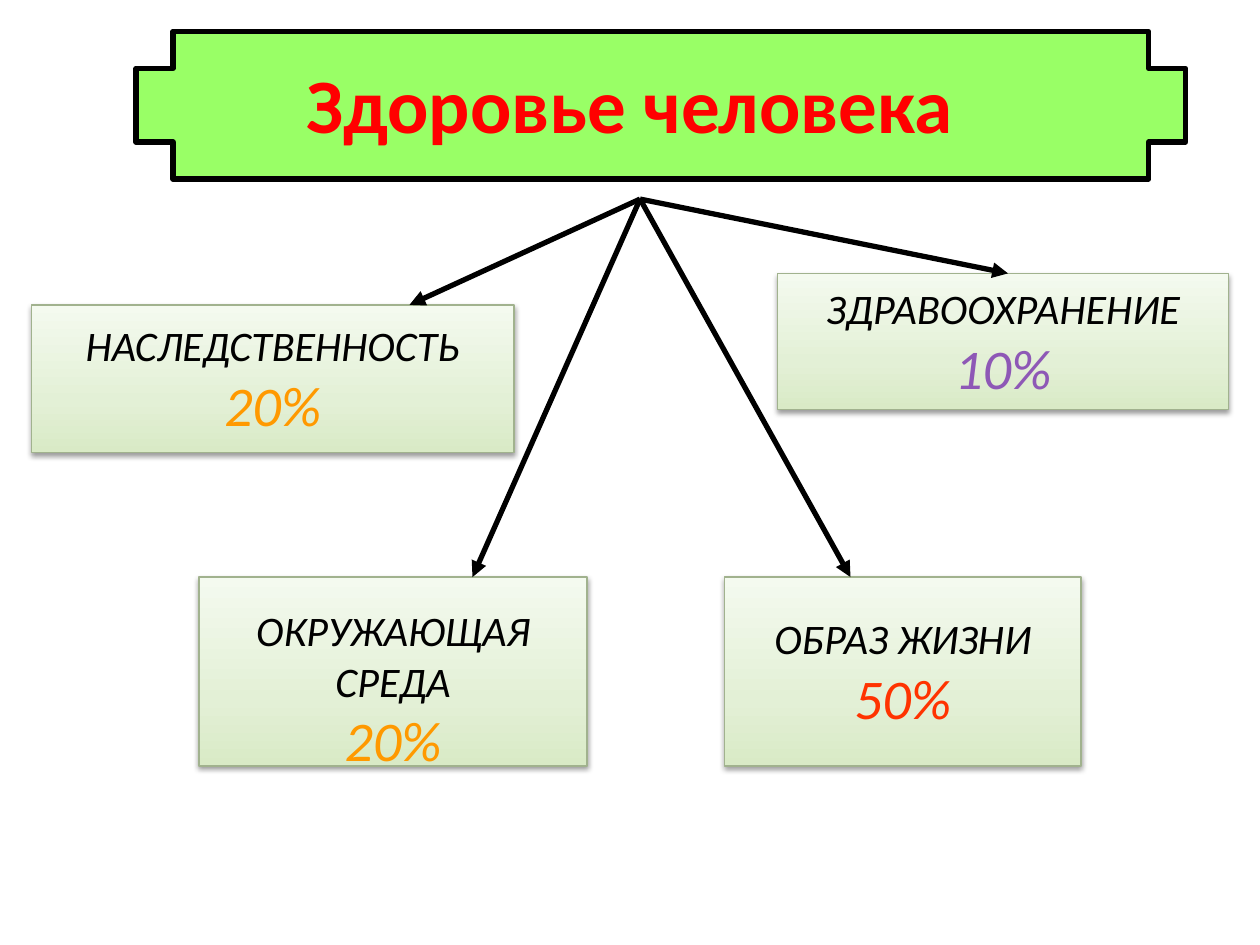
import copy

import pptx
import pptx.dml.color
import pptx.enum.shapes
import pptx.enum.text
import pptx.oxml
import pptx.oxml.ns
import pptx.util
from pptx.util import Inches

SHAPE = pptx.enum.shapes.MSO_SHAPE
ANCHOR = pptx.enum.text.MSO_ANCHOR
qn = pptx.oxml.ns.qn
NAMESPACE = pptx.oxml.ns.nsdecls("a")

FACTOR_SHADOW = (
    f'<a:outerShdw {NAMESPACE} blurRad="40000" dist="20000" dir="5400000" rotWithShape="0">'
    '<a:srgbClr val="000000"><a:alpha val="38000"/></a:srgbClr></a:outerShdw>'
)


def color(value):
    return pptx.dml.color.RGBColor.from_string(value)


class SlideBuilder:
    font_name = "Calibri"
    black = "000000"
    gradient = [(0, "D9EAC6"), (0.35, "E3F0D6"), (1, "F4FAEF")]
    factor_line = "A1B28E"

    def __init__(self, slide):
        self.slide = slide

    def outline(self, line, value, width):
        line.color.rgb = color(value)
        line.width = pptx.util.Pt(width)

    def set_text(self, frame, lines, frame_format):
        """Fill a text frame with centred lines given as (text, font values)."""
        for name, value in frame_format.items():
            setattr(frame, name, value)
        for index, (text, font_format) in enumerate(lines):
            paragraph = frame.paragraphs[0] if index == 0 else frame.add_paragraph()
            paragraph.alignment = pptx.enum.text.PP_ALIGN.CENTER
            run = paragraph.add_run()
            run.text = text
            values = {"name": self.font_name, **font_format}
            run.font.color.rgb = color(values.pop("color"))
            run.font.size = pptx.util.Pt(values.pop("size"))
            for name, value in values.items():
                setattr(run.font, name, value)

    def banner(self, left, top, width, height, fill):
        shape = self.slide.shapes.add_shape(
            SHAPE.CROSS, Inches(left), Inches(top), Inches(width), Inches(height))
        shape.adjustments[0] = 0.25
        shape.shadow.inherit = False
        shape.fill.solid()
        shape.fill.fore_color.rgb = color(fill)
        self.outline(shape.line, self.black, 3)

    def title(self, left, top, width, height, text):
        box = self.slide.shapes.add_textbox(
            Inches(left), Inches(top), Inches(width), Inches(height))
        self.set_text(box.text_frame,
                      [(text, {"size": 44, "color": "FF0000", "bold": True})],
                      {"word_wrap": True, "vertical_anchor": ANCHOR.MIDDLE})

    def factor(self, left, top, width, height, names, share, share_color, frame_format):
        shape = self.slide.shapes.add_shape(
            SHAPE.RECTANGLE, Inches(left), Inches(top), Inches(width), Inches(height))
        self.fill_gradient(shape)
        self.outline(shape.line, self.factor_line, 0.75)
        shape.shadow.inherit = False
        effects = shape.element.spPr.find(qn("a:effectLst"))
        effects.append(pptx.oxml.parse_xml(FACTOR_SHADOW))
        lines = [(name, {"size": 24, "color": self.black, "italic": True}) for name in names]
        lines.append((share, {"size": 32, "color": share_color, "italic": True}))
        self.set_text(shape.text_frame, lines,
                      {"word_wrap": False, "vertical_anchor": ANCHOR.MIDDLE, **frame_format})

    def fill_gradient(self, shape):
        shape.fill.gradient()
        shape.fill.gradient_angle = 90
        stop_list = shape.element.spPr.find(qn("a:gradFill")).find(qn("a:gsLst"))
        stop_list.append(copy.deepcopy(stop_list[0]))
        for stop, (position, value) in zip(shape.fill.gradient_stops, self.gradient):
            stop.position = position
            stop.color.rgb = color(value)

    def arrow(self, start, end):
        connector = self.slide.shapes.add_connector(
            pptx.enum.shapes.MSO_CONNECTOR.STRAIGHT, *map(Inches, start + end))
        self.outline(connector.line, self.black, 3)
        properties = connector.element.spPr
        properties.find(qn("a:ln")).append(
            pptx.oxml.parse_xml(f'<a:tailEnd {NAMESPACE} type="triangle"/>'))
        properties.append(pptx.oxml.parse_xml(f"<a:effectLst {NAMESPACE}/>"))


def main():
    presentation = pptx.Presentation()
    presentation.slide_width = Inches(10)
    presentation.slide_height = Inches(7.5)
    builder = SlideBuilder(presentation.slides.add_slide(presentation.slide_layouts[6]))

    # Heading
    builder.banner(1.08, 0.25, 8.33, 1.17, "99FF66")
    builder.title(0.5, 0.3, 9, 1.03, "Здоровье человека")

    # Health factors; the three-line box starts its text lower
    lowered = {"vertical_anchor": ANCHOR.TOP, "margin_top": Inches(0.22), "margin_bottom": 0}
    factors = [
        (0.25, 2.42, 3.83, 1.17, ["НАСЛЕДСТВЕННОСТЬ"], "20%", "FF9900", {}),
        (1.58, 4.58, 3.08, 1.5, ["ОКРУЖАЮЩАЯ", "СРЕДА"], "20%", "FF9900", lowered),
        (6.17, 2.17, 3.58, 1.08, ["ЗДРАВООХРАНЕНИЕ"], "10%", "8E58B6", {}),
        (5.75, 4.58, 2.83, 1.5, ["ОБРАЗ ЖИЗНИ"], "50%", "FF3300", {}),
    ]
    for factor in factors:
        builder.factor(*factor)

    # Arrows from the heading to each factor
    for end in [(3.25, 2.42), (3.75, 4.58), (8, 2.17), (6.75, 4.58)]:
        builder.arrow((5.08, 1.58), end)

    presentation.save("out.pptx")


if __name__ == "__main__":
    main()
